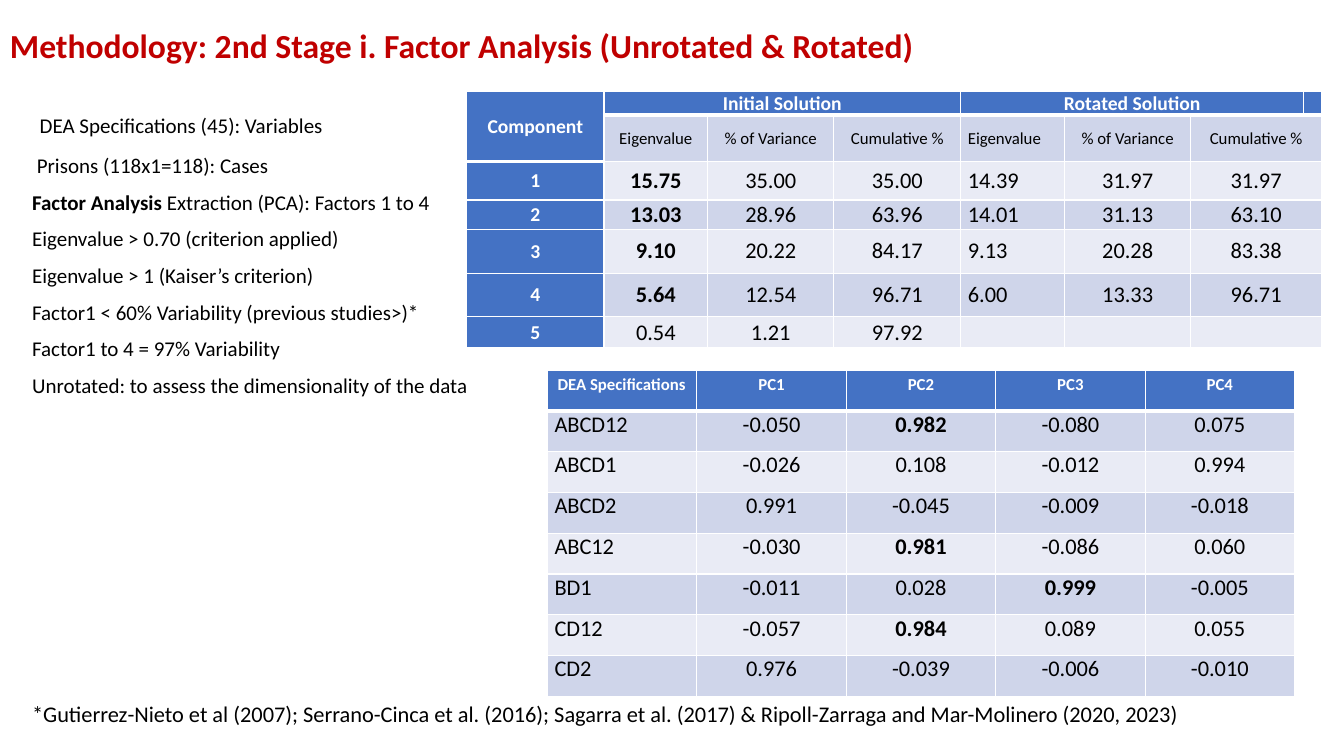
from dataclasses import dataclass

from lxml import etree
from pptx import Presentation
from pptx.dml.color import RGBColor
from pptx.enum.text import MSO_ANCHOR, PP_ALIGN
from pptx.oxml.ns import qn
from pptx.util import Inches, Pt

LEFT, CENTER = PP_ALIGN.LEFT, PP_ALIGN.CENTER
TOP, MIDDLE, BOTTOM = MSO_ANCHOR.TOP, MSO_ANCHOR.MIDDLE, MSO_ANCHOR.BOTTOM


@dataclass(frozen=True)
class Theme:
    font: str = "Calibri"
    title: str = "C00000"
    ink: str = "000000"
    white: str = "FFFFFF"
    header: str = "4472C4"
    bands: tuple = ("CFD5EA", "E9EBF5")
    title_size: int = 24
    figure_size: int = 16
    list_size: int = 15
    header_size: int = 14
    label_size: int = 12


THEME = Theme()
GRID = 0.1  # inches per grid column and row


def units(count):
    return Inches(count * GRID)


def write(frame, text, size, color=THEME.ink, bold=False, align=LEFT, lead="",
          before=0, spacing=None, indent=0, first=True):
    """Write one paragraph, with an optional bold lead before the text."""
    para = frame.paragraphs[0] if first else frame.add_paragraph()
    para.alignment = align
    if spacing:
        para.line_spacing = spacing
    if before and not first:
        para.space_before = Pt(before)
    if indent:
        properties = para._p.get_or_add_pPr()
        properties.set("marL", str(Pt(indent)))
        properties.set("indent", "0")
    for words, heavy in ((lead, True), (text, bold)):
        if words:
            span = para.add_run()
            span.text = words
            span.font.name, span.font.size, span.font.bold = THEME.font, Pt(size), heavy
            span.font.color.rgb = RGBColor.from_string(color)
    if not para.runs:
        etree.SubElement(para._p, qn("a:endParaRPr"), sz=str(size * 100))


class SlideBuilder:
    def __init__(self, deck, theme):
        self.theme = theme
        self.slide = deck.slides.add_slide(deck.slide_layouts[6])

    def text_box(self, place, anchor=TOP):
        box = self.slide.shapes.add_textbox(*map(units, place))
        box.text_frame.word_wrap = True
        box.text_frame.vertical_anchor = anchor
        return box.text_frame

    def table(self, left, top, columns, rows):
        place = map(units, (left, top, sum(columns), sum(rows)))
        table = self.slide.shapes.add_table(len(rows), len(columns), *place).table
        table.first_row = table.horz_banding = False
        for column, width in zip(table.columns, columns):
            column.width = units(width)
        for row, height in zip(table.rows, rows):
            row.height = units(height)
        return table

    def cell(self, cell, text, fill, anchor=TOP, compact=True, rule=1, **text_format):
        cell.fill.solid()
        cell.fill.fore_color.rgb = RGBColor.from_string(fill)
        cell.vertical_anchor = anchor
        if compact:
            cell.margin_left = cell.margin_right = units(0.7)
            cell.margin_top = cell.margin_bottom = 0
        write(cell.text_frame, text, **text_format)
        properties = cell._tc.get_or_add_tcPr()
        for index, side in enumerate("LRTB"):
            width = rule if side == "B" else 1
            line = etree.Element(qn(f"a:ln{side}"), w=str(Pt(width)))
            paint = etree.SubElement(line, qn("a:solidFill"))
            etree.SubElement(paint, qn("a:srgbClr"), val=self.theme.white)
            properties.insert(index, line)


METHOD_LINES = [
    dict(text="DEA Specifications (45): Variables", indent=5.4),
    dict(text="Prisons (118x1=118): Cases", indent=3.4, before=12),
    dict(text=" Extraction (PCA): Factors 1 to 4", lead="Factor Analysis"),
    dict(text="Eigenvalue > 0.70 (criterion applied)"),
    dict(text="Eigenvalue > 1 (Kaiser’s criterion)"),
    dict(text="Factor1 < 60% Variability (previous studies>)*"),
    dict(text="Factor1 to 4 = 97% Variability"),
    dict(text="Unrotated: to assess the dimensionality of the data"),
]
MEASURES = ["Eigenvalue", "% of Variance", "Cumulative %"]
VARIANCE = [
    ["Component", "Initial Solution", "", "", "Rotated Solution", "", "", ""],
    ["", *MEASURES, *MEASURES, ""],
    ["1", "15.75", "35.00", "35.00", "14.39", "31.97", "31.97", ""],
    ["2", "13.03", "28.96", "63.96", "14.01", "31.13", "63.10", ""],
    ["3", "9.10", "20.22", "84.17", "9.13", "20.28", "83.38", ""],
    ["4", "5.64", "12.54", "96.71", "6.00", "13.33", "96.71", ""],
    ["5", "0.54", "1.21", "97.92", "", "", "", ""],
]
LOADINGS = [
    ["DEA Specifications", "PC1", "PC2", "PC3", "PC4"],
    ["ABCD12", "-0.050", "0.982", "-0.080", "0.075"],
    ["ABCD1", "-0.026", "0.108", "-0.012", "0.994"],
    ["ABCD2", "0.991", "-0.045", "-0.009", "-0.018"],
    ["ABC12", "-0.030", "0.981", "-0.086", "0.060"],
    ["BD1", "-0.011", "0.028", "0.999", "-0.005"],
    ["CD12", "-0.057", "0.984", "0.089", "0.055"],
    ["CD2", "0.976", "-0.039", "-0.006", "-0.010"],
]


def add_variance_table(builder):
    theme = builder.theme
    table = builder.table(46.3, 9.1, [13.6, 10.3, 12.5, 12.6, 10.3, 12.5, 11.2, 1],
                          [1.9, 4.6, 3.8, 2.9, 4.4, 4.3, 3.1])
    spans = [(0, 0, 1, 0), (0, 1, 0, 3), (0, 4, 0, 6)]
    spans += [(row, 6, row, 7) for row in range(1, len(VARIANCE))]
    for top, left, bottom, right in spans:
        table.cell(top, left).merge(table.cell(bottom, right))
    for r, values in enumerate(VARIANCE):
        for c, value in enumerate(values):
            header = r == 0 or c == 0
            size = (theme.header_size if header else
                    theme.label_size if r == 1 else theme.figure_size)
            retained = c == 1 and 2 <= r <= 5  # eigenvalues above the criterion
            builder.cell(table.cell(r, c), value, anchor=MIDDLE, size=size,
                         fill=theme.header if header else theme.bands[(r + 1) % 2],
                         color=theme.white if header else theme.ink,
                         bold=header or retained,
                         align=LEFT if c == 4 and r > 0 else CENTER,
                         rule=3 if r == 0 or (r, c) == (1, 0) else 1)


def add_loadings_table(builder):
    theme = builder.theme
    table = builder.table(54.3, 36.7, [14.82] * 5, [4.05] * len(LOADINGS))
    for r, values in enumerate(LOADINGS):
        for c, value in enumerate(values):
            header = r == 0
            strong = not header and c in (2, 3) and float(value) > 0.9
            builder.cell(table.cell(r, c), value, compact=not header,
                         size=theme.label_size if header else theme.figure_size,
                         fill=theme.header if header else theme.bands[(r + 1) % 2],
                         color=theme.white if header else theme.ink,
                         bold=header or strong, align=CENTER if c else LEFT,
                         rule=3 if header else 1)


def main():
    deck = Presentation()
    deck.slide_width, deck.slide_height = Inches(13.33), Inches(7.5)
    builder = SlideBuilder(deck, THEME)

    # Title
    write(builder.text_box((0, 3.2, 133.3, 3.8), BOTTOM),
          "Methodology: 2nd Stage i. Factor Analysis (Unrotated & Rotated)",
          size=THEME.title_size, color=THEME.title, bold=True, spacing=0.9)

    # Method steps
    frame = builder.text_box((2.2, 11, 46, 31))
    for index, line in enumerate(METHOD_LINES):
        write(frame, first=index == 0,
              **{"size": THEME.list_size, "spacing": 0.9, "before": 10, **line})

    # Result tables
    add_variance_table(builder)
    add_loadings_table(builder)

    # Sources
    write(builder.text_box((2.2, 69.3, 131, 4)),
          "*Gutierrez-Nieto et al (2007); Serrano-Cinca et al. (2016); Sagarra et al. (2017) "
          "& Ripoll-Zarraga and Mar-Molinero (2020, 2023)",
          size=THEME.figure_size, spacing=0.9)

    deck.save("out.pptx")


if __name__ == "__main__":
    main()
